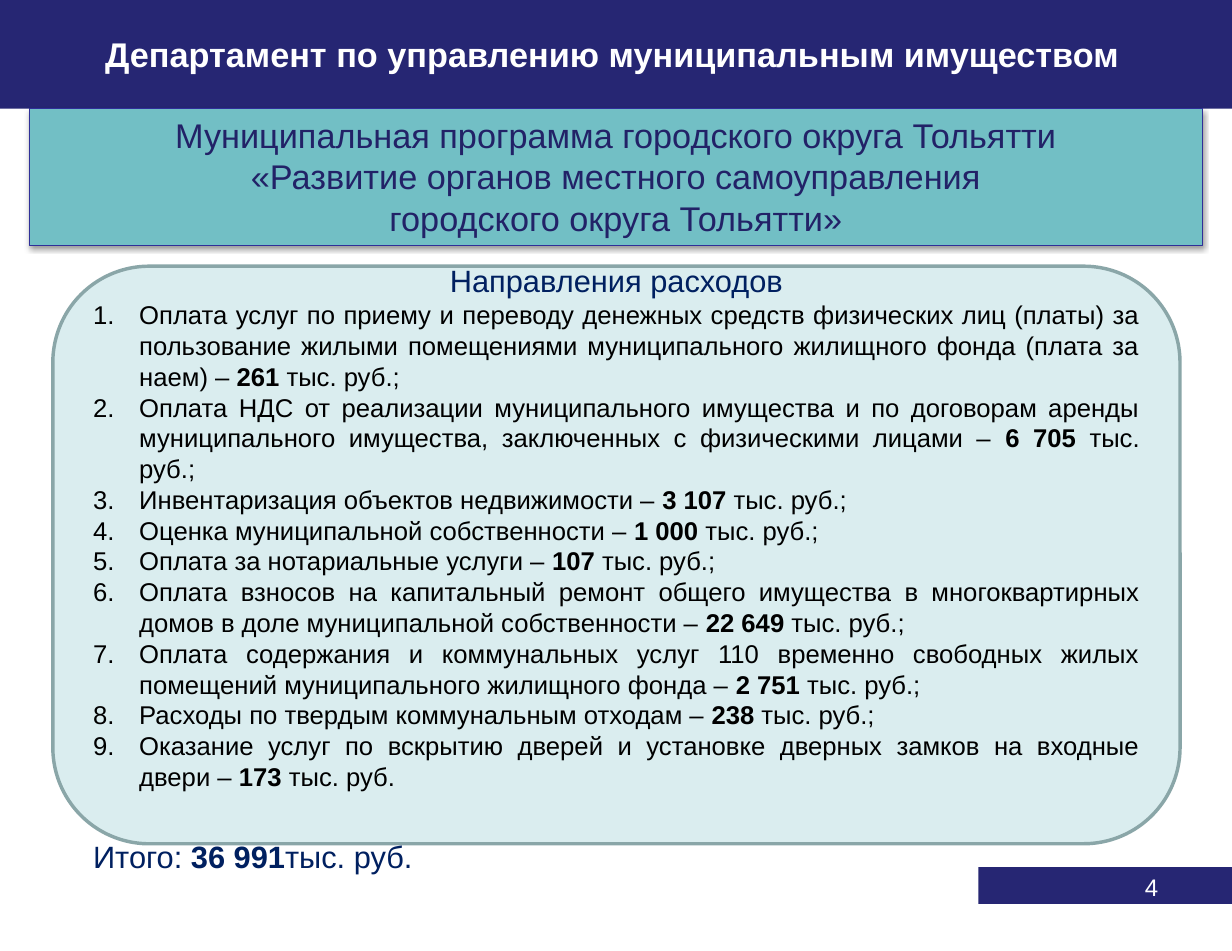
"""Build the budget slide of the municipal property department."""
from lxml import etree
from pptx import Presentation
from pptx import util as u
from pptx.dml.color import RGBColor
from pptx.enum import shapes, text
from pptx.oxml.ns import qn

NAVY = RGBColor(0x26, 0x26, 0x73)
INDIGO = RGBColor(0x22, 0x22, 0x67)
EDGE = RGBColor(0x2F, 0x2F, 0x98)
TEAL = RGBColor(0x72, 0xBF, 0xC5)
PALE = RGBColor(0xDA, 0xED, 0xEF)
GREY = RGBColor(0x8A, 0xA6, 0xA8)
BLUE = RGBColor(0x00, 0x20, 0x60)
BLACK = RGBColor(0, 0, 0)
WHITE = RGBColor(0xFF, 0xFF, 0xFF)

RECT = shapes.MSO_SHAPE.RECTANGLE
ROUND = shapes.MSO_SHAPE.ROUNDED_RECTANGLE
LEFT, CENTER, RIGHT, JUSTIFY = (
    text.PP_ALIGN.LEFT, text.PP_ALIGN.CENTER, text.PP_ALIGN.RIGHT, text.PP_ALIGN.JUSTIFY)
TOP, MIDDLE = text.MSO_ANCHOR.TOP, text.MSO_ANCHOR.MIDDLE

PROGRAM = [
    "Муниципальная программа городского округа Тольятти",
    "«Развитие органов местного самоуправления",
    "городского округа Тольятти»",
]
EXPENSES = [
    ("Оплата услуг по приему и переводу денежных средств физических лиц (платы) за "
     "пользование жилыми помещениями муниципального жилищного фонда (плата за наем)", "261"),
    ("Оплата НДС от реализации муниципального имущества и по договорам аренды "
     "муниципального имущества, заключенных с физическими лицами", "6 705"),
    ("Инвентаризация объектов недвижимости", "3 107"),
    ("Оценка муниципальной собственности", "1 000"),
    ("Оплата за нотариальные услуги", "107"),
    ("Оплата взносов на капитальный ремонт общего имущества в многоквартирных "
     "домов в доле муниципальной собственности", "22 649"),
    ("Оплата содержания и коммунальных услуг 110 временно свободных жилых "
     "помещений муниципального жилищного фонда", "2 751"),
    ("Расходы по твердым коммунальным отходам", "238"),
    ("Оказание услуг по вскрытию дверей и установке дверных замков на входные двери", "173"),
]


class Deck:
    """Hold the text style and the current slide."""

    font = "Arial"

    def __init__(self, prs):
        self.s = prs.slides.add_slide(prs.slide_layouts[6])

    def box(self, x, y, w, h, fill, line=None, width=0.75, kind=RECT, anchor=MIDDLE):
        sp = self.s.shapes.add_shape(kind, u.Cm(x), u.Cm(y), u.Cm(w), u.Cm(h))
        sp.shadow.inherit = False
        sp.fill.solid()
        sp.fill.fore_color.rgb = fill
        if line is None:
            sp.line.fill.background()
        else:
            sp.line.color.rgb = line
            sp.line.width = u.Pt(width)
        sp.text_frame.word_wrap = True
        sp.text_frame.vertical_anchor = anchor
        return sp

    def label(self, x, y, w, h):
        tf = self.s.shapes.add_textbox(u.Cm(x), u.Cm(y), u.Cm(w), u.Cm(h)).text_frame
        tf.word_wrap = True
        return tf

    def para(self, tf, runs, size, color, align=LEFT, spacing=None, before=None):
        p = tf.paragraphs[0]
        if p.runs:
            p = tf.add_paragraph()
        p.alignment = align
        if spacing:
            p.line_spacing = spacing
        if before:
            p.space_before = u.Pt(before)
        for words, bold in runs:
            r = p.add_run()
            r.text = words
            r.font.name = self.font
            r.font.size = u.Pt(size)
            r.font.bold = bold
            r.font.color.rgb = color
        return p

    def number(self, p, indent):
        pr = p._p.get_or_add_pPr()
        pr.set("marL", str(u.Cm(indent)))
        pr.set("indent", str(-u.Cm(indent)))
        etree.SubElement(pr, qn("a:buFont"), typeface=self.font)
        etree.SubElement(pr, qn("a:buAutoNum"), type="arabicPeriod")

    def shadow(self, sp):
        effects = sp._element.spPr.find(qn("a:effectLst"))
        outer = etree.SubElement(effects, qn("a:outerShdw"), blurRad=str(u.Pt(3.1)),
                                 dist=str(u.Pt(1.6)), dir="5400000", rotWithShape="0")
        color = etree.SubElement(outer, qn("a:srgbClr"), val=str(BLACK))
        etree.SubElement(color, qn("a:alpha"), val="38000")


def main():
    prs = Presentation()
    prs.slide_width, prs.slide_height = u.Cm(25.4), u.Cm(19.61)
    deck = Deck(prs)

    deck.box(20.17, 17.88, 5.23, 0.76, NAVY)
    deck.para(deck.label(18.21, 17.86, 5.92, 1.37), [("4", False)], 14, WHITE, RIGHT)

    tf = deck.box(0, 0, 25.4, 2.24, NAVY).text_frame
    tf.margin_top, tf.margin_right = u.Cm(0.25), u.Cm(0.4)
    deck.para(tf, [("Департамент по управлению муниципальным имуществом", True)],
              20, WHITE, CENTER, spacing=0.8)

    program = deck.box(0.61, 2.24, 24.18, 2.82, TEAL, EDGE, anchor=TOP)
    deck.shadow(program)
    for line in PROGRAM:
        deck.para(program.text_frame, [(line, False)], 20, INDIGO, CENTER)

    tf = deck.box(1.09, 5.49, 23.24, 11.91, PALE, GREY, 2, ROUND).text_frame
    tf.margin_top = u.Cm(0.68)
    deck.para(tf, [("Направления расходов", False)], 18, BLUE, CENTER)
    for i, (name, amount) in enumerate(EXPENSES, 1):
        end = "." if i == len(EXPENSES) else ".;"
        p = deck.para(tf, [(f"{name} – ", False), (amount, True), (f" тыс. руб{end}", False)],
                      15, BLACK, JUSTIFY)
        deck.number(p, 0.95)
    deck.para(tf, [("Итого: ", False), ("36 991", True), ("тыс. руб.", False)],
              18, BLUE, JUSTIFY, before=27)

    prs.save("out.pptx")


if __name__ == "__main__":
    main()
